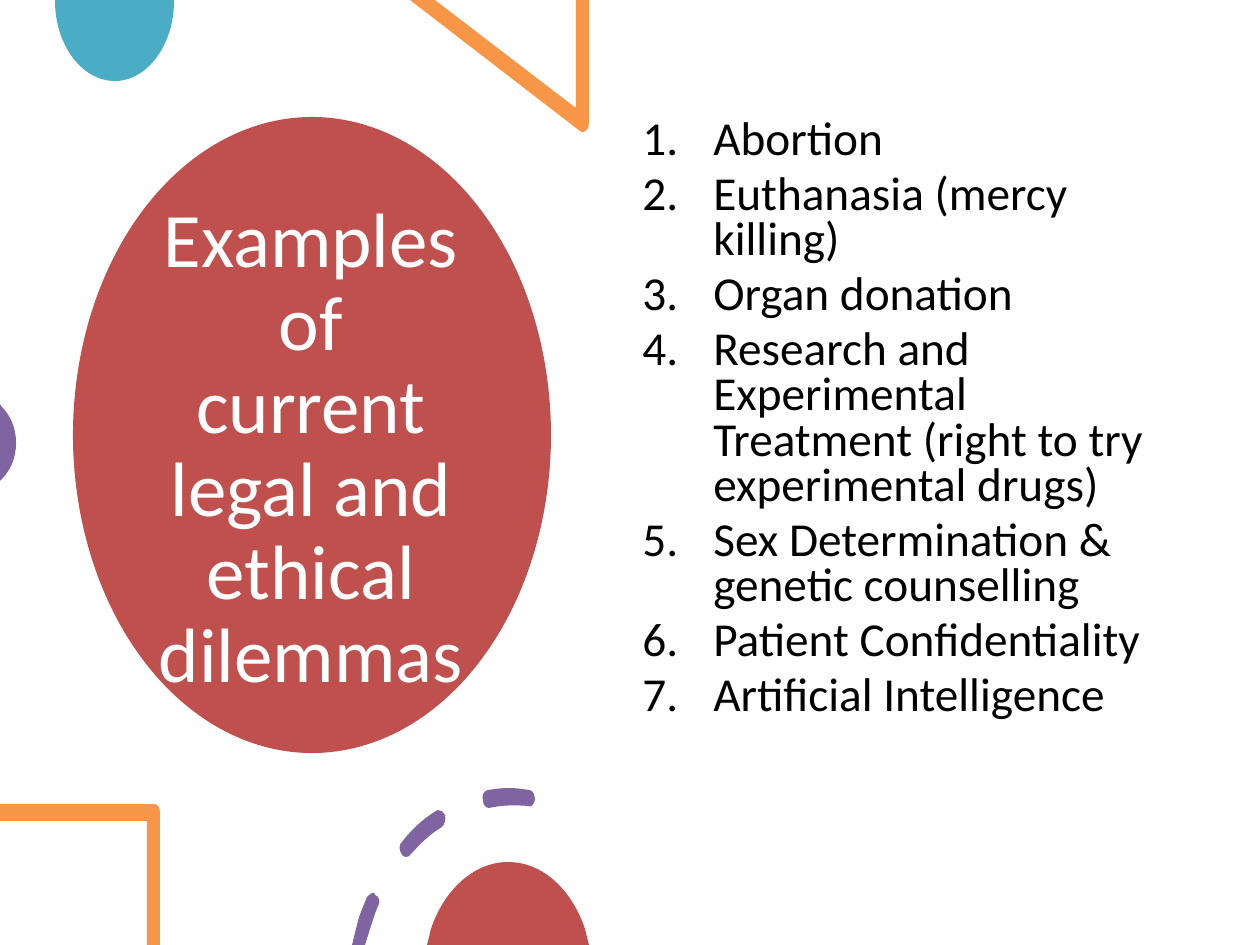
from lxml import etree
from pptx import Presentation
from pptx import util as u
from pptx.dml.color import RGBColor
from pptx.enum import shapes, text
from pptx.oxml.ns import qn

SCALE = u.Inches(1) / 126
FONT = "Calibri"
RED, TEAL, ORANGE, PURPLE = "C0504D", "4BACC6", "F79646", "8064A2"

TITLE = "Examples of current legal and ethical dilemmas"
DILEMMAS = [
    "Abortion",
    "Euthanasia (mercy killing)",
    "Organ donation",
    "Research and Experimental Treatment (right to try experimental drugs)",
    "Sex Determination & genetic counselling",
    "Patient Confidentiality",
    "Artificial Intelligence",
]

# Contours: two numbers are a corner, six are a cubic curve to the last point.
TEAL_DISC = [(174, 0), (55, 0), (55, 1), (55, 45, 82, 81, 115, 81),
             (147, 81, 174, 45, 174, 1)]
TRIANGLE = [(589, 0), (576, 0), (576, 108), (435, 0), (410, 0), (580, 131),
            (581, 132, 581, 132, 582, 132), (586, 132, 589, 129, 589, 123)]
PURPLE_DISC = [(0, 404), (0, 481), (1, 480), (10, 471, 16, 459, 16, 443),
               (16, 427, 10, 415, 1, 406)]
FRAME = [(154, 804), (0, 804), (0, 821), (147, 821), (147, 945), (160, 945),
         (160, 813), (160, 808, 158, 804, 154, 804)]
DASHES = [
    [(374, 893), (372, 892, 369, 895, 367, 897), (364, 905, 360, 913, 358, 921),
     (352, 945), (365, 945), (370, 929), (373, 920, 375, 913, 378, 906),
     (381, 902, 379, 896, 375, 895), (375, 893, 374, 893, 374, 893)],
    [(438, 810), (437, 810, 437, 810, 436, 811), (423, 819, 412, 829, 402, 842),
     (399, 844, 399, 850, 401, 853), (402, 856, 404, 857, 406, 857),
     (408, 857, 410, 856, 411, 854), (420, 844, 430, 834, 442, 827),
     (445, 824, 446, 819, 445, 815), (444, 812, 441, 810, 438, 810)],
    [(509, 788), (501, 788, 495, 789, 488, 790), (485, 790, 481, 795, 483, 800),
     (483, 804, 485, 808, 489, 808), (503, 805, 515, 805, 528, 806),
     (531, 808, 534, 804, 535, 800), (535, 795, 533, 790, 529, 790),
     (522, 789, 516, 788, 509, 788)],
]
RED_DISC = [(508, 862), (474, 862, 444, 890, 431, 929), (427, 945), (589, 945),
            (585, 929), (572, 890, 543, 862, 508, 862)]


def px(length):
    return u.Emu(round(length * SCALE))


def color(hex_string):
    return RGBColor.from_string(hex_string)


def paint(shape, fill):
    shape.shadow.inherit = False
    shape.fill.solid()
    shape.fill.fore_color.rgb = color(fill)
    shape.line.fill.background()


def bend(segment, part, left, top):
    """Turn a straight path segment into a cubic curve."""
    segment.tag
    curve = etree.Element(qn("a:cubicBezTo"))
    for x, y in zip(part[::2], part[1::2]):
        etree.SubElement(curve, qn("a:pt"), x=str(x - left), y=str(y - top))
    segment.getparent().replace(segment, curve)


def add_outline(slide, contours, fill):
    builder = None
    for start, *rest in contours:
        if builder is None:
            builder = slide.shapes.build_freeform(*start, scale=SCALE)
        else:
            builder.move_to(*start)
        builder.add_line_segments([part[-2:] for part in rest], close=True)
    shape = builder.convert_to_shape()

    parts = [part for contour in contours for part in contour]
    left = min(part[-2] for part in parts)
    top = min(part[-1] for part in parts)
    segments = list(shape._element.iter(qn("a:moveTo"), qn("a:lnTo")))
    for segment, part in zip(segments, parts):
        if len(part) == 6:
            bend(segment, part, left, top)
    paint(shape, fill)


def add_ellipse(slide, box, fill):
    shape = slide.shapes.add_shape(shapes.MSO_SHAPE.OVAL, *map(px, box))
    paint(shape, fill)


def add_text_frame(slide, box, anchor):
    frame = slide.shapes.add_textbox(*map(px, box)).text_frame
    frame.word_wrap = True
    frame.vertical_anchor = anchor
    return frame


def add_run(paragraph, words, size, fill):
    run = paragraph.add_run()
    run.text = words
    run.font.name = FONT
    run.font.size = u.Pt(size)
    run.font.color.rgb = color(fill)


def add_title(slide, box, words):
    paragraph = add_text_frame(slide, box, text.MSO_ANCHOR.MIDDLE).paragraphs[0]
    paragraph.alignment = text.PP_ALIGN.CENTER
    paragraph.line_spacing = 0.9
    add_run(paragraph, words, 44, "FFFFFF")


def number(paragraph, indent):
    """Give a paragraph an automatic number with a hanging indent."""
    properties = paragraph._p.get_or_add_pPr()
    properties.set("marL", str(px(indent)))
    properties.set("indent", str(-px(indent)))
    etree.SubElement(properties, qn("a:buFont"), typeface="+mj-lt")
    etree.SubElement(properties, qn("a:buAutoNum"), type="arabicPeriod")


def add_numbered_list(slide, box, items):
    frame = add_text_frame(slide, box, text.MSO_ANCHOR.TOP)
    for index, item in enumerate(items):
        paragraph = frame.add_paragraph() if index else frame.paragraphs[0]
        number(paragraph, 71)
        paragraph.line_spacing = 0.8
        if index:
            paragraph.space_before = u.Pt(5.4)
        add_run(paragraph, item, 27, "000000")


def main():
    presentation = Presentation()
    presentation.slide_width = px(1260)
    presentation.slide_height = px(945)
    slide = presentation.slides.add_slide(presentation.slide_layouts[6])

    add_ellipse(slide, (73, 117, 478, 636), RED)
    add_title(slide, (144, 170, 334, 560), TITLE)
    add_outline(slide, [TEAL_DISC], TEAL)
    add_outline(slide, [TRIANGLE], ORANGE)
    add_outline(slide, [PURPLE_DISC], PURPLE)
    add_numbered_list(slide, (630, 113, 543, 674), DILEMMAS)
    add_outline(slide, [FRAME], ORANGE)
    add_outline(slide, DASHES, PURPLE)
    add_outline(slide, [RED_DISC], RED)

    presentation.save("out.pptx")


if __name__ == "__main__":
    main()
